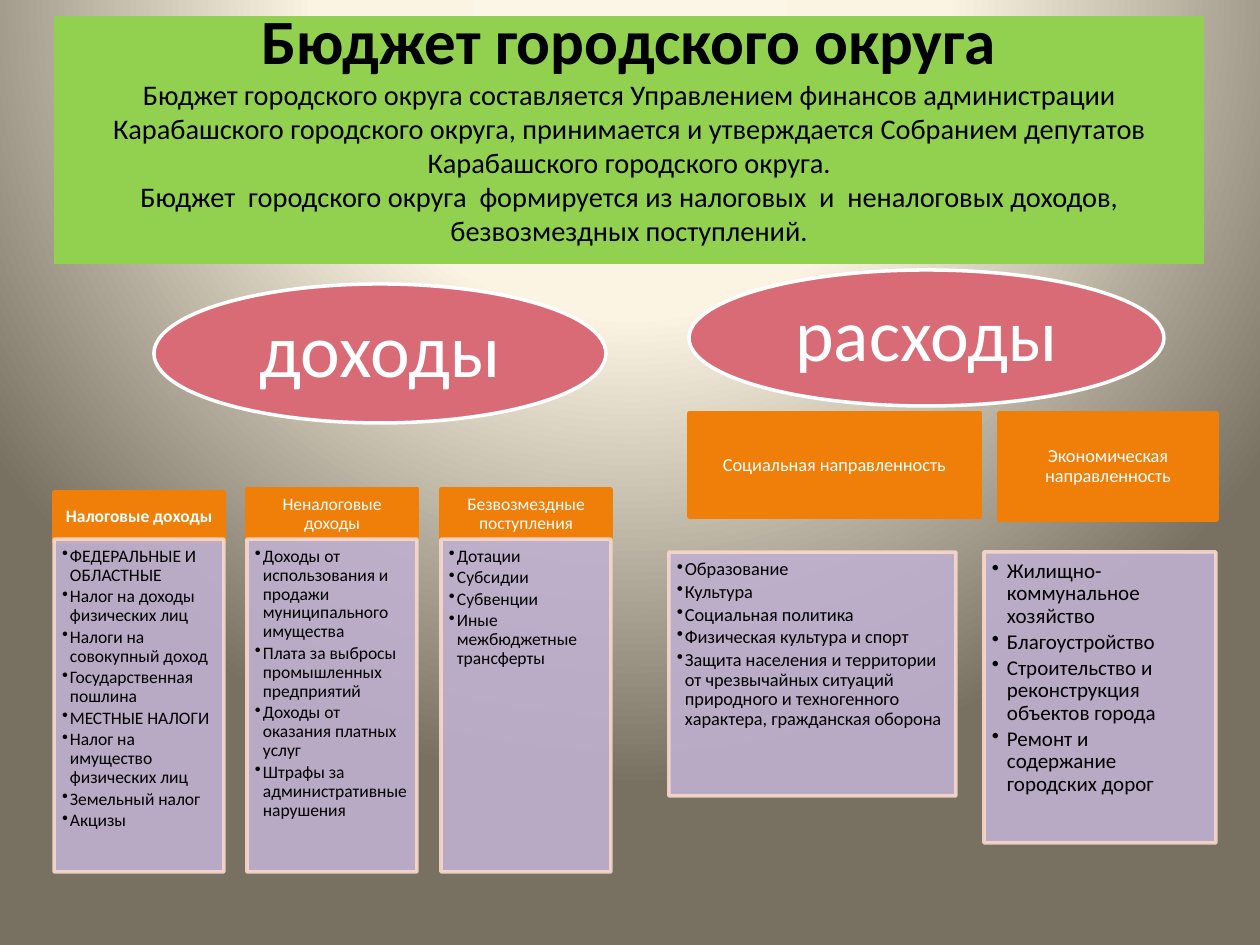
from pptx import Presentation
from pptx.dml.color import RGBColor
from pptx.enum.shapes import MSO_SHAPE
from pptx.enum.text import MSO_ANCHOR, MSO_AUTO_SIZE, PP_ALIGN
from pptx.oxml import parse_xml
from pptx.oxml.ns import nsdecls, qn
from pptx.util import Pt
from lxml.etree import SubElement

PX = 914400 / 126
HUES = {
    "title": "92D050", "head": "F07F09", "body": "BFB0CF", "edge": "F9D8CC",
    "oval": "D96B77", "white": "FFFFFF", "black": "000000",
    "glow": "FCF6E6", "cream": "FBF4E2", "dusk": "787161",
}
GLOW = [(0, "glow"), (40, "cream"), (100, "dusk")]

TITLE = "Бюджет городского округа"
INTRO = [
    "Бюджет городского округа составляется Управлением финансов администрации "
    "Карабашского городского округа, принимается и утверждается Собранием "
    "депутатов Карабашского городского округа.",
    "Бюджет  городского округа  формируется из налоговых  и  неналоговых "
    "доходов, безвозмездных поступлений.",
]
INCOME = [
    ("Налоговые доходы", [
        "ФЕДЕРАЛЬНЫЕ И ОБЛАСТНЫЕ", "Налог на доходы физических лиц",
        "Налоги на совокупный доход", "Государственная пошлина",
        "МЕСТНЫЕ НАЛОГИ", "Налог на имущество физических лиц",
        "Земельный налог", "Акцизы"]),
    ("Неналоговые доходы", [
        "Доходы от использования и продажи муниципального имущества",
        "Плата за выбросы промышленных предприятий",
        "Доходы от оказания платных услуг",
        "Штрафы за административные нарушения"]),
    ("Безвозмездные поступления", [
        "Дотации", "Субсидии", "Субвенции", "Иные межбюджетные трансферты"]),
]
SOCIAL = [
    "Образование", "Культура", "Социальная политика",
    "Физическая культура и спорт",
    "Защита населения и территории от чрезвычайных ситуаций природного и "
    "техногенного характера, гражданская оборона",
]
ECONOMY = [
    "Жилищно-коммунальное хозяйство", "Благоустройство",
    "Строительство и реконструкция объектов города",
    "Ремонт и  содержание городских дорог",
]


def px(n):
    return round(n * PX)


def rgb(name):
    return RGBColor.from_string(HUES[name])


class Board:
    """Holds the style and the current slide."""
    face = "Calibri"

    def __init__(self, slide):
        self.slide = slide

    def back(self):
        stops = "".join(
            f'<a:gs pos="{at * 1000}"><a:srgbClr val="{HUES[hue]}"/></a:gs>'
            for at, hue in GLOW)
        self.slide._element.cSld.insert(0, parse_xml(
            f'<p:bg {nsdecls("p", "a")}><p:bgPr><a:gradFill><a:gsLst>{stops}'
            '</a:gsLst><a:path path="circle"><a:fillToRect l="50000" '
            't="-80000" r="50000" b="180000"/></a:path></a:gradFill>'
            '<a:effectLst/></p:bgPr></p:bg>'))

    def label(self, shape, lines, size, hue, pads, anchor=MSO_ANCHOR.MIDDLE,
              align=PP_ALIGN.CENTER, gap=0, lead=0.9):
        """Fill a shape with one paragraph a line; return the paragraphs."""
        frame = shape.text_frame
        frame.text = "\n".join(lines)
        frame.word_wrap = True
        frame.auto_size = MSO_AUTO_SIZE.NONE
        frame.vertical_anchor = anchor
        (frame.margin_left, frame.margin_top,
         frame.margin_right, frame.margin_bottom) = map(px, pads)
        for para in frame.paragraphs:
            para.alignment = align
            para.line_spacing = lead
            para.space_after = Pt(gap)
            para.font.name = self.face
            para.font.size = Pt(size)
            para.font.bold = False
            para.font.color.rgb = rgb(hue)
        return frame.paragraphs

    def title(self, box, head, lines):
        shape = self.slide.shapes.title
        shape.left, shape.top, shape.width, shape.height = map(px, box)
        shape.fill.solid()
        shape.fill.fore_color.rgb = rgb("title")
        paras = self.label(shape, [head, *lines], 16.2, "black",
                           (12, 0, 12, 32), lead=1.0)
        paras[0].font.size = Pt(36)
        paras[0].font.bold = True

    def shape(self, kind, box, fill, line):
        shape = self.slide.shapes.add_shape(kind, *map(px, box))
        shape.shadow.inherit = False
        shape.fill.solid()
        shape.fill.fore_color.rgb = rgb(fill)
        shape.line.color.rgb = rgb(line)
        shape.line.width = Pt(2)
        return shape

    def oval(self, box, text, size):
        shape = self.shape(MSO_SHAPE.OVAL, box, "oval", "white")
        self.label(shape, [text], size, "white", (8, 8, 8, 8))

    def head(self, box, text, size, bold=False):
        shape = self.shape(MSO_SHAPE.RECTANGLE, box, "head", "head")
        paras = self.label(shape, [text], size, "white", (10, 5, 10, 5))
        paras[0].font.bold = bold

    def body(self, box, items, size, indent=8):
        shape = self.shape(MSO_SHAPE.RECTANGLE, box, "body", "edge")
        for tint in shape._element.spPr.iter(qn("a:srgbClr")):
            SubElement(tint, qn("a:alpha")).set("val", "90000")
        paras = self.label(shape, items, size, "black", (8, 8, 10, 12),
                           MSO_ANCHOR.TOP, PP_ALIGN.LEFT, 0.15 * size)
        for para in paras:
            props = para._p.get_or_add_pPr()
            props.set("marL", str(px(indent)))
            props.set("indent", str(-px(indent)))
            mark = parse_xml(f'<a:buChar {nsdecls("a")} char="•"/>')
            props.find(qn("a:defRPr")).addprevious(mark)


def main():
    deck = Presentation()
    deck.slide_width, deck.slide_height = px(1260), px(945)
    board = Board(deck.slides.add_slide(deck.slide_layouts[5]))
    board.back()
    board.title((54, 16, 1150, 248), TITLE, INTRO)

    for i, (name, items) in enumerate(INCOME):
        left = 54 + 387 * i // 2
        first = i == 0
        board.head((left, 492 if first else 489, 170, 50), name, 10, first)
        board.body((left, 539, 170, 333), items, 10)

    board.head((689, 413, 291, 104), "Социальная направленность", 10.5)
    board.body((669, 552, 287, 244), SOCIAL, 10.5)
    board.head((999, 413, 218, 107), "Экономическая направленность", 10.5)
    board.body((984, 552, 232, 291), ECONOMY, 12, 15)

    board.oval((154, 284, 452, 139), "доходы", 43)
    board.oval((689, 270, 475, 136), "расходы", 42)
    deck.save("out.pptx")


if __name__ == "__main__":
    main()
